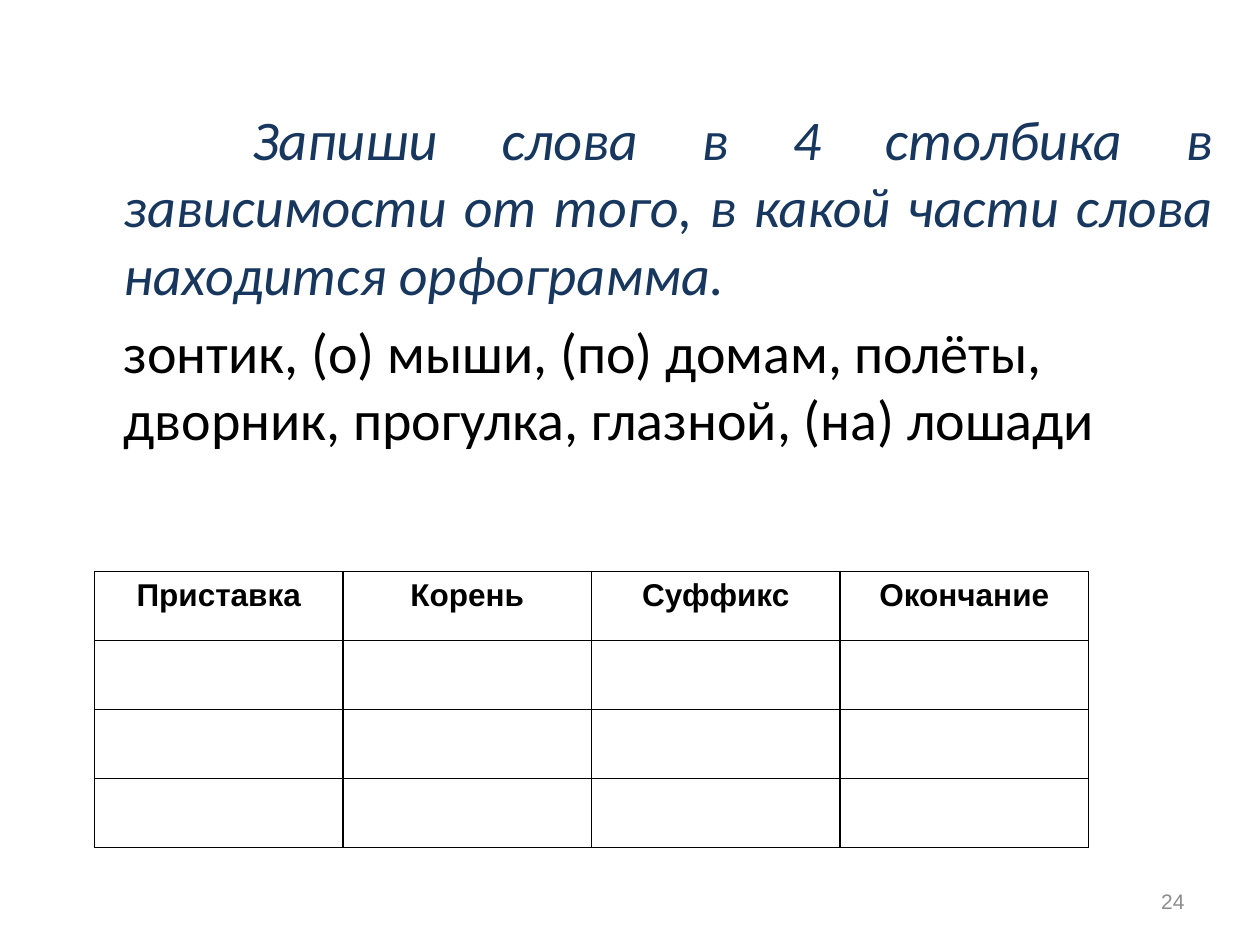
from lxml.etree import SubElement
from pptx import Presentation
from pptx.dml.color import RGBColor
from pptx.enum.text import MSO_ANCHOR, MSO_AUTO_SIZE, PP_ALIGN
from pptx.oxml.ns import qn
from pptx.util import Inches, Pt

WIDTH, HEIGHT = Inches(10), Inches(7.5)


def rgb(code):
    return RGBColor.from_string(code)


class Worksheet:
    """Holds the worksheet style and its slide; boxes are shares of the slide size."""

    ink, task_ink, number_ink, paper = "000000", "17375E", "8C8C8C", "FFFFFF"
    task_font, table_font = "Calibri", "Arial"
    hanging = Inches(0.38)

    def __init__(self, deck):
        self.slide = deck.slides.add_slide(deck.slide_layouts[1])
        heading = self.slide.shapes.title.element
        heading.getparent().remove(heading)

    def box(self, left, top, width, height):
        return [round(share * side) for share, side in
                zip((left, top, width, height), (WIDTH, HEIGHT) * 2)]

    def add_text(self, paragraph, text, color, align, **formats):
        paragraph.alignment = align
        run = paragraph.add_run()
        run.text = text
        run.font.color.rgb = rgb(color)
        for name, value in formats.items():
            setattr(run.font, name, value)

    def exercise(self, area, paragraphs):
        body = self.slide.placeholders[1]
        for name, value in zip(("left", "top", "width", "height"), self.box(*area)):
            setattr(body, name, value)
        frame = body.text_frame
        frame.auto_size = MSO_AUTO_SIZE.NONE
        for index, (text, color, align, indent, italic) in enumerate(paragraphs):
            paragraph = frame.add_paragraph() if index else frame.paragraphs[0]
            self.add_text(paragraph, text, color, align,
                          name=self.task_font, size=Pt(32), italic=italic)
            properties = paragraph._p.get_or_add_pPr()
            properties.set("marL", str(self.hanging))
            properties.set("indent", str(indent))
            SubElement(properties, qn("a:buNone"))

    def border(self, cell):
        properties = cell._tc.get_or_add_tcPr()
        for position, side in enumerate(("a:lnL", "a:lnR", "a:lnT", "a:lnB")):
            line = properties.makeelement(qn(side), {"w": str(Pt(1))})
            fill = SubElement(line, qn("a:solidFill"))
            SubElement(fill, qn("a:srgbClr"), val=self.ink)
            properties.insert(position, line)

    def answer_table(self, area, headers, rows):
        table = self.slide.shapes.add_table(rows, len(headers), *self.box(*area)).table
        table.horz_banding = False
        for cell in table.iter_cells():
            cell.fill.solid()
            cell.fill.fore_color.rgb = rgb(self.paper)
            self.border(cell)
        for column, header in enumerate(headers):
            self.add_text(table.cell(0, column).text_frame.paragraphs[0], header, self.ink,
                          PP_ALIGN.CENTER, name=self.table_font, size=Pt(18), bold=True)

    def page_number(self, area, number):
        frame = self.slide.shapes.add_textbox(*self.box(*area)).text_frame
        frame.word_wrap = True
        frame.vertical_anchor = MSO_ANCHOR.MIDDLE
        self.add_text(frame.paragraphs[0], number, self.number_ink, PP_ALIGN.RIGHT,
                      name=self.table_font, size=Pt(12))


def main():
    deck = Presentation()
    deck.slide_width, deck.slide_height = WIDTH, HEIGHT
    sheet = Worksheet(deck)
    sheet.page_number((0.717, 0.927, 0.233, 0.053), "24")
    sheet.exercise((0.05, 0.104, 0.923, 0.79), [
        ("Запиши слова в 4 столбика в зависимости от того, в какой части слова "
         "находится орфограмма.", sheet.task_ink, PP_ALIGN.JUSTIFY, Inches(1.02), True),
        ("зонтик, (о) мыши, (по) домам, полёты, дворник, прогулка, глазной, (на) лошади",
         sheet.ink, PP_ALIGN.LEFT, 0, False),
    ])
    sheet.answer_table((0.075, 0.605, 0.789, 0.292),
                       ("Приставка", "Корень", "Суффикс", "Окончание"), rows=4)
    deck.save("out.pptx")


if __name__ == "__main__":
    main()
